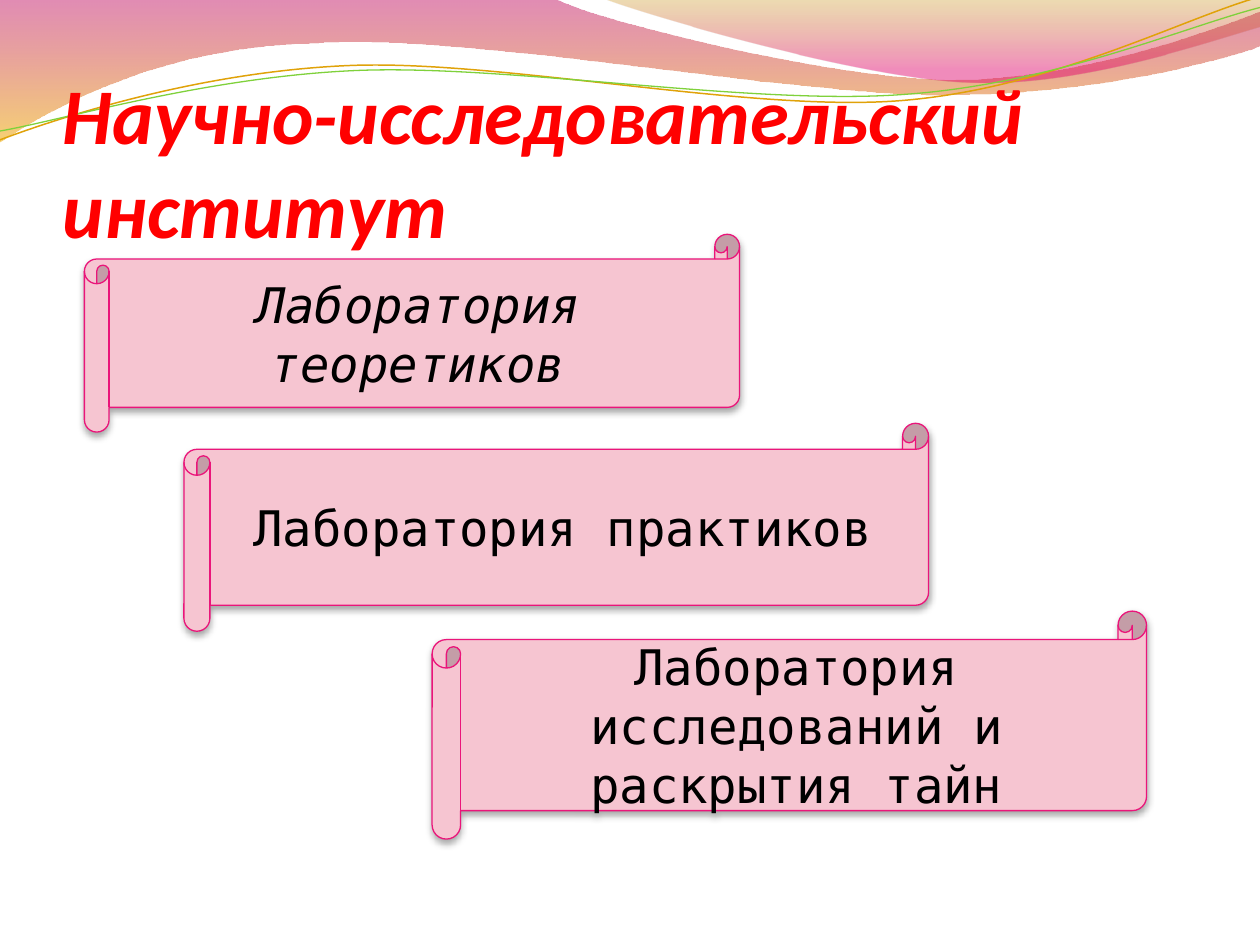
from math import cos, radians, sin

from lxml.etree import SubElement
from pptx import Presentation
from pptx.dml.color import RGBColor
from pptx.enum.shapes import MSO_SHAPE as Preset
from pptx.enum.text import MSO_ANCHOR as Anchor, PP_ALIGN as Align
from pptx.oxml.ns import qn
from pptx.util import Inches, Pt

STRAND_TILT = 2.7

UPPER_WAVE = [
    (0, 0), (4.4, -0.01),
    (4.76, 0.17, 6.64, 0.63, 7.58, 0.63),
    (8.53, 0.63, 9.58, 0.26, 10, 0.09),
    (10.01, 0.36),
    (9.83, 0.44, 8.7, 0.76, 7.46, 0.75),
    (6.22, 0.75, 3.82, 0.28, 2.57, 0.34),
    (1.29, 0.36, 0.46, 0.83, -0.01, 1.13),
    (0, 0),
]
RIGHT_WAVE = [
    (4.79, -0.01),
    (5.09, 0.11, 6.82, 0.62, 7.69, 0.65),
    (8.56, 0.69, 9.61, 0.32, 10, 0.21),
    (10, 0), (4.79, -0.01),
]
ORANGE_STRAND = [
    (0, 1.11),
    (0.48, 0.93, 1.58, 0.57, 2.77, 0.52),
    (3.95, 0.47, 5.93, 0.89, 7.13, 0.8),
    (8.33, 0.71, 9.38, 0.15, 9.98, -0.02),
]
GREEN_STRAND = [
    (0, 1.04),
    (0.47, 0.96, 1.64, 0.61, 2.83, 0.56),
    (4.03, 0.51, 5.97, 0.84, 7.17, 0.75),
    (8.36, 0.67, 9.41, 0.21, 10, 0.06),
]
SCROLLS = [
    ((0.67, 1.86, 5.2, 1.57), "Лаборатория теоретиков", True),
    ((1.46, 3.36, 5.91, 1.65), "Лаборатория практиков", False),
    ((3.43, 4.85, 5.67, 1.81), "Лаборатория исследований и раскрытия тайн", False),
]


def color(value):
    return RGBColor.from_string(value)


def turn(point, center, degrees):
    dx, dy = point[0] - center[0], point[1] - center[1]
    angle = radians(degrees)
    return (center[0] + dx * cos(angle) - dy * sin(angle),
            center[1] + dx * sin(angle) + dy * cos(angle))


def outline(page, left, top, path, close, center=(0, 0), tilt=0):
    points = [turn(segment[i:i + 2], center, tilt)
              for segment in path for i in range(0, len(segment), 2)]
    corners = [(Inches(left + x), Inches(top + y)) for x, y in points]
    builder = page.shapes.build_freeform(*corners[0], scale=1.0)
    builder.add_line_segments(corners[1:], close=close)
    shape = builder.convert_to_shape()
    lines = iter(list(shape._element.spPr.iter(qn("a:lnTo"))))
    for segment in path[1:]:
        first = next(lines)
        if len(segment) == 6:
            first.tag = qn("a:cubicBezTo")
            curve = SubElement(first.getparent(), qn("a:cubicBezTo"))
            first.getparent().replace(first, curve)
            curve.extend(list(first))
            for _ in range(2):
                line = next(lines)
                curve.extend(list(line))
                line.getparent().remove(line)
    shape.shadow.inherit = False
    shape.rotation = -tilt % 360
    return shape


def add_wave(page, left, top, path, stops):
    wave = outline(page, left, top, path, True)
    wave.line.fill.background()
    wave.fill.gradient()
    wave.fill.gradient_angle = 270
    for stop, (position, value, _) in zip(wave.fill.gradient_stops, stops):
        stop.position = position
        stop.color.rgb = color(value)
    for node, (_, _, opacity) in zip(wave._element.spPr.iter(qn("a:srgbClr")), stops):
        SubElement(node, qn("a:alpha"), val=str(opacity * 1000))


def add_strand(page, left, top, path, center, value, width):
    strand = outline(page, left, top, path, False, center, STRAND_TILT)
    strand.fill.background()
    strand.line.color.rgb = color(value)
    strand.line.width = Pt(width)


def add_header(page, left, top):
    add_wave(page, left, top, UPPER_WAVE, [(0, "BD0059", 45), (1, "F0AB00", 55)])
    add_wave(page, left, top, RIGHT_WAVE, [(0, "C38B00", 30), (0.8, "E1006B", 45)])
    add_strand(page, left, top, ORANGE_STRAND, (4.99, 0.57), "E0A209", 0.85)
    add_strand(page, left, top, GREEN_STRAND, (5, 0.59), "7FD13B", 0.75)


def add_span(para, text, font, size, value, bold, italic):
    span = para.add_run()
    span.text = text
    span.font.name = font
    span.font.size = Pt(size)
    span.font.color.rgb = color(value)
    span.font.bold = bold
    span.font.italic = italic


def add_title(page, left, top, width, height):
    box = page.shapes.add_textbox(Inches(left), Inches(top), Inches(width), Inches(height))
    frame = box.text_frame
    frame.word_wrap = True
    frame.vertical_anchor = Anchor.BOTTOM
    frame.margin_left = frame.margin_right = frame.margin_bottom = 0
    frame.margin_top = Inches(0.05)
    add_span(frame.paragraphs[0], "Научно-исследовательский институт",
             "Calibri", 45, "FF0000", True, True)


def add_shadow(shape):
    shape.shadow.inherit = False
    effects = shape._element.spPr.find(qn("a:effectLst"))
    shadow = SubElement(effects, qn("a:outerShdw"), blurRad=str(Pt(4)),
                        dist=str(Pt(2)), dir="5400000", rotWithShape="0")
    tint = SubElement(shadow, qn("a:srgbClr"), val="000000")
    SubElement(tint, qn("a:alpha"), val="35000")


def add_scroll(page, left, top, width, height, text, italic):
    scroll = page.shapes.add_shape(Preset.HORIZONTAL_SCROLL, Inches(left), Inches(top),
                                   Inches(width), Inches(height))
    scroll.fill.solid()
    scroll.fill.fore_color.rgb = color("F6C5D1")
    scroll.line.color.rgb = color("EA157A")
    scroll.line.width = Pt(0.75)
    add_shadow(scroll)
    frame = scroll.text_frame
    frame.word_wrap = True
    frame.vertical_anchor = Anchor.MIDDLE
    para = frame.paragraphs[0]
    para.alignment = Align.CENTER
    add_span(para, text, "DejaVu Sans Mono", 28, "000000", False, italic)


def main():
    deck = Presentation()
    deck.slide_width, deck.slide_height = Inches(10), Inches(7.5)
    page = deck.slides.add_slide(deck.slide_layouts[6])
    add_header(page, 0, 0)
    add_title(page, 0.5, 0.77, 9, 1.25)
    for place, text, italic in SCROLLS:
        add_scroll(page, *place, text, italic)
    deck.save("out.pptx")


if __name__ == "__main__":
    main()
